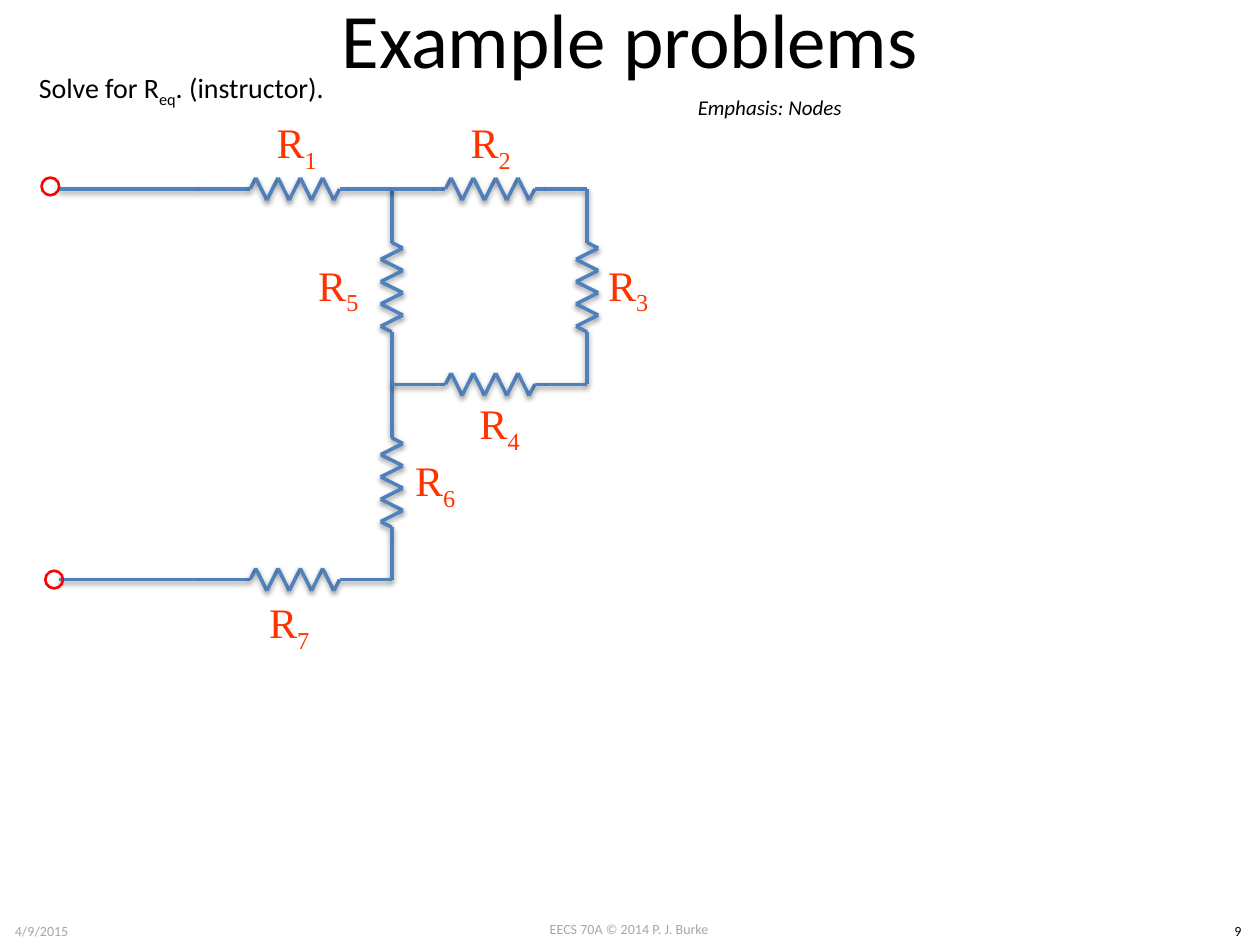
from itertools import pairwise

from lxml.etree import SubElement
from pptx import Presentation
from pptx.dml.color import RGBColor
from pptx.enum.shapes import MSO_CONNECTOR, MSO_SHAPE
from pptx.enum.text import MSO_ANCHOR, MSO_AUTO_SIZE, PP_ALIGN
from pptx.oxml.ns import qn
from pptx.util import Inches, Pt

BLACK = RGBColor(0x00, 0x00, 0x00)
GREY = RGBColor(0xA6, 0xA6, 0xA6)
WIRE_BLUE = RGBColor(0x4F, 0x81, 0xBD)
LABEL_RED = RGBColor(0xFF, 0x33, 0x00)
TERMINAL_RED = RGBColor(0xFF, 0x00, 0x00)

COLUMNS, ROWS = 100, 75
NODE_GAP = 15.5
NODE_LEFT, NODE_TOP = 0.1, -0.5
LEAD_STEPS = (0, 3.4, 4.25)
TAIL_STEPS = (11.35, 12.2, NODE_GAP)
FIRST_PEAK, PEAK_STEP, PEAK_COUNT, PEAK_HEIGHT = 4.7, 0.885, 8, 0.88


class CircuitSlide:
    body_font = "Calibri"
    label_font = "Times New Roman"

    def __init__(self, presentation):
        self.slide = presentation.slides.add_slide(presentation.slide_layouts[6])
        self.column = presentation.slide_width / COLUMNS
        self.row = presentation.slide_height / ROWS

    def place(self, left, top, width, height):
        return (round(left * self.column), round(top * self.row),
                round(width * self.column), round(height * self.row))

    def node(self, column, row):
        return NODE_LEFT + column * NODE_GAP, NODE_TOP + row * NODE_GAP

    def text(self, pieces, box, size, color=BLACK, font=body_font, align=PP_ALIGN.LEFT,
             anchor=MSO_ANCHOR.TOP, wrap=True, italic=None, shapes=None):
        textbox = (shapes or self.slide.shapes).add_textbox(*self.place(*box))
        frame = textbox.text_frame
        frame.word_wrap = wrap
        frame.vertical_anchor = anchor
        if not wrap:
            frame.auto_size = MSO_AUTO_SIZE.SHAPE_TO_FIT_TEXT
        paragraph = frame.paragraphs[0]
        paragraph.alignment = align
        paragraph.font.size = Pt(size)
        paragraph.font.name = font
        paragraph.font.color.rgb = color
        paragraph.font.italic = italic
        for position, piece in enumerate(pieces):
            run = paragraph.add_run()
            run.text = piece
            if position % 2:
                run.font._element.set("baseline", "-25000")

    def wire(self, start, end, shapes=None):
        line = (shapes or self.slide.shapes).add_connector(
            MSO_CONNECTOR.STRAIGHT, *self.place(*start, *end))
        line.line.color.rgb = WIRE_BLUE
        line.line.width = Pt(2)
        effects = SubElement(line._element.spPr, qn("a:effectLst"))
        shadow = SubElement(effects, qn("a:outerShdw"), blurRad="40000",
                            dist="20000", dir="5400000", rotWithShape="0")
        tint = SubElement(shadow, qn("a:srgbClr"), val=str(BLACK))
        SubElement(tint, qn("a:alpha"), val="38000")

    def resistor(self, number, column, row, vertical, label_left, label_top):
        shapes = self.slide.shapes.add_group_shape().shapes
        self.text(["R", number], (label_left, label_top, 11.9, 7.3), 24, LABEL_RED,
                  self.label_font, PP_ALIGN.CENTER, MSO_ANCHOR.MIDDLE, shapes=shapes)
        peaks = [(FIRST_PEAK + i * PEAK_STEP, PEAK_HEIGHT * (-1) ** i)
                 for i in range(PEAK_COUNT)]
        outline = [(step, 0) for step in LEAD_STEPS] + peaks + [(step, 0) for step in TAIL_STEPS]
        x, y = self.node(column, row)
        points = [(x + across, y + along) if vertical else (x + along, y - across)
                  for along, across in outline]
        for start, end in pairwise(points):
            self.wire(start, end, shapes)

    def terminal(self, left, top):
        ring = self.slide.shapes.add_shape(MSO_SHAPE.OVAL, *self.place(left, top, 1.4, 1.4))
        ring.shadow.inherit = False
        ring.fill.background()
        ring.line.color.rgb = TERMINAL_RED
        ring.line.width = Pt(1.5)


def main():
    presentation = Presentation()
    presentation.slide_width = Inches(10)
    presentation.slide_height = Inches(7.5)
    page = CircuitSlide(presentation)

    page.text(["EECS 70A © 2014 P. J. Burke"], (38.3, 72.6, 23.3, 2.4), 8, GREY,
              align=PP_ALIGN.CENTER)
    page.text(["9"], (96.5, 72.7, 3.5, 2.4), 8, align=PP_ALIGN.CENTER)
    page.text(["Example problems"], (5, -3.3, 90, 12.5), 44,
              align=PP_ALIGN.CENTER, anchor=MSO_ANCHOR.MIDDLE)
    page.text(["Solve for R", "eq", ". (instructor)."], (2.1, 5.1, 26, 3.7), 16, wrap=False)

    resistors = [
        ("5", 2, 1, True, 20.9, 19.2),
        ("6", 2, 2, True, 28.6, 34.7),
        ("1", 1, 1, False, 17.6, 7.9),
        ("2", 2, 1, False, 33, 7.9),
        ("3", 3, 1, True, 43.9, 19.2),
        ("4", 2, 2, False, 33.7, 30.2),
        ("7", 1, 3, False, 17, 46),
    ]
    for resistor in resistors:
        page.resistor(*resistor)

    for row, ring_left, ring_top in ((1, 3.3, 14.1), (3, 3.6, 45.3)):
        lead_end = page.node(1, row)
        page.wire((4.7, lead_end[1]), lead_end)
        page.terminal(ring_left, ring_top)

    page.text(["Emphasis: Nodes"], (54.4, 7, 14, 3), 12, wrap=False, italic=True)
    page.text(["4/9/2015"], (0.2, 72.7, 20.7, 2.3), 8, GREY, anchor=MSO_ANCHOR.MIDDLE)

    presentation.save("out.pptx")


if __name__ == "__main__":
    main()
